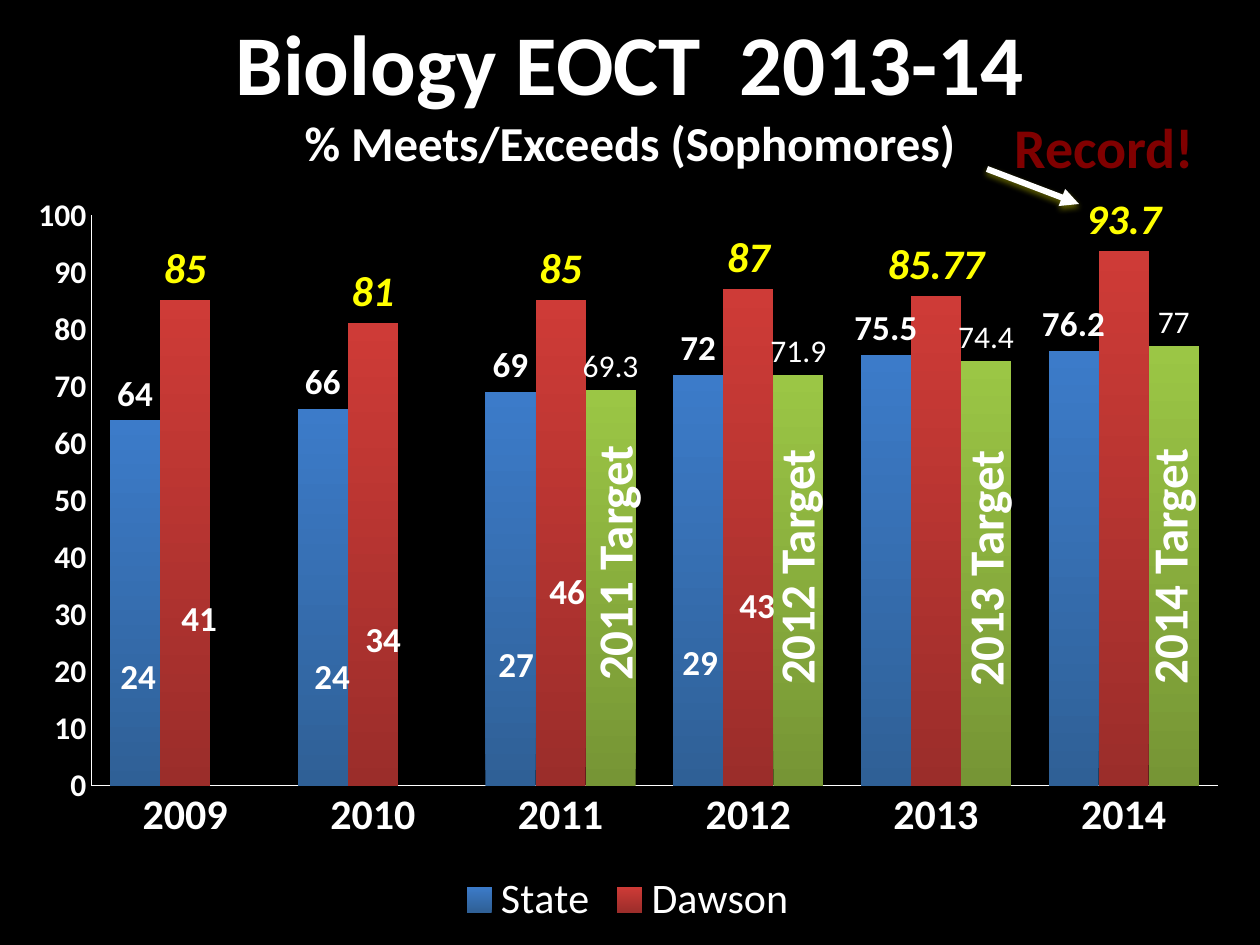
from lxml import etree
from pptx import Presentation
from pptx.chart.data import CategoryChartData
from pptx.dml.color import RGBColor
from pptx.enum.chart import XL_CHART_TYPE, XL_LABEL_POSITION, XL_LEGEND_POSITION, XL_TICK_MARK
from pptx.enum.shapes import MSO_CONNECTOR
from pptx.enum.text import MSO_ANCHOR, PP_ALIGN
from pptx.oxml import parse_xml
from pptx.oxml.ns import nsdecls, qn
from pptx.util import Pt

COLUMN = XL_CHART_TYPE.COLUMN_CLUSTERED
OUTSIDE_END = XL_LABEL_POSITION.OUTSIDE_END
LEGEND_BOTTOM = XL_LEGEND_POSITION.BOTTOM
NO_TICK = XL_TICK_MARK.NONE
STRAIGHT = MSO_CONNECTOR.STRAIGHT
TOP, MIDDLE = MSO_ANCHOR.TOP, MSO_ANCHOR.MIDDLE
LEFT, CENTER = PP_ALIGN.LEFT, PP_ALIGN.CENTER

EMU_PER_PX = 914400 / 126
FONT = "Calibri"
BLACK = RGBColor(0x00, 0x00, 0x00)
WHITE = RGBColor(0xFF, 0xFF, 0xFF)
YELLOW = RGBColor(0xFF, 0xFF, 0x00)
MAROON = RGBColor(0x80, 0x00, 0x00)
BLUE, DARK_BLUE = RGBColor(0x3C, 0x7B, 0xC9), RGBColor(0x2F, 0x60, 0x96)
RED, DARK_RED = RGBColor(0xCE, 0x3B, 0x37), RGBColor(0x9B, 0x2D, 0x2A)
GREEN, DARK_GREEN = RGBColor(0x9B, 0xC6, 0x45), RGBColor(0x76, 0x95, 0x35)

YEARS = ["2009", "2010", "2011", "2012", "2013", "2014"]
SERIES = [
    ("State", [64, 66, 69, 72, 75.5, 76.2], BLUE, DARK_BLUE, (20, WHITE, True, False)),
    ("Dawson", [85, 81, 85, 87, 85.77, 93.7], RED, DARK_RED, (24, YELLOW, True, True)),
    ("Series 3", [None, None, 69.3, 71.9, 74.4, 77], GREEN, DARK_GREEN, (18, WHITE, False, False)),
]
BAR_NOTES = [
    ("24", 108, 648), ("41", 169, 590), ("24", 302, 648), ("34", 353, 611),
    ("27", 486, 636), ("46", 537, 563), ("29", 670, 634), ("43", 727, 577),
]
TARGETS = [
    ("2011 Target", 571, 339, 448), ("2012 Target", 753, 343, 448),
    ("2013 Target", 942, 375, 387), ("2014 Target", 1126, 373, 387),
]


def px(value):
    return round(value * EMU_PER_PX)


def box_emu(box):
    return [px(length) for length in box]


def style_font(font, size, color=WHITE, bold=True, italic=False):
    font.name = FONT
    font.size = Pt(size)
    font.color.rgb = color
    font.bold = bold
    font.italic = italic


def add_text(slide, box, text, sizes, color=WHITE, align=LEFT, anchor=TOP, wrap=False):
    shape = slide.shapes.add_textbox(*box_emu(box))
    text_frame = shape.text_frame
    text_frame.word_wrap = wrap
    text_frame.vertical_anchor = anchor
    text_frame.text = text
    paragraph = text_frame.paragraphs[0]
    paragraph.alignment = align
    for run, size in zip(paragraph.runs, sizes):
        style_font(run.font, size, color)
    return shape


def add_title(slide, box):
    add_text(slide, box, "Biology EOCT  2013-14\v% Meets/Exceeds (Sophomores)",
             [48.6, 27.9], align=CENTER, anchor=MIDDLE, wrap=True)


def set_plot_layout(chart, x, y, width, height):
    plot_area = chart.element.chart.plotArea
    for layout in plot_area.findall(qn("c:layout")):
        plot_area.remove(layout)
    layout = etree.Element(qn("c:layout"))
    manual = etree.SubElement(layout, qn("c:manualLayout"))
    settings = [("layoutTarget", "inner"), ("xMode", "edge"), ("yMode", "edge"),
                ("x", x), ("y", y), ("w", width), ("h", height)]
    for tag, value in settings:
        etree.SubElement(manual, qn(f"c:{tag}")).set("val", str(value))
    plot_area.insert(0, layout)


def style_axis(axis, size):
    axis.major_tick_mark = NO_TICK
    axis.minor_tick_mark = NO_TICK
    axis.has_major_gridlines = False
    axis.format.line.color.rgb = WHITE
    axis.format.line.width = Pt(0.75)
    style_font(axis.tick_labels.font, size)


def style_series(series, light, dark, label_style):
    fill = series.format.fill
    fill.gradient()
    fill.gradient_angle = 90
    for stop, color in zip(fill.gradient_stops, (dark, light)):
        stop.color.rgb = color
    labels = series.data_labels
    labels.show_value = True
    labels.position = OUTSIDE_END
    style_font(labels.font, *label_style)


def add_legend(chart):
    chart.has_legend = True
    legend = chart.legend
    legend.position = LEGEND_BOTTOM
    legend.include_in_layout = False
    style_font(legend.font, 24, bold=False)
    legend_position = legend._element.find(qn("c:legendPos"))
    legend_position.addnext(parse_xml(
        f'<c:legendEntry {nsdecls("c")}><c:idx val="2"/><c:delete val="1"/></c:legendEntry>'))


def add_score_chart(slide, box):
    data = CategoryChartData()
    data.categories = YEARS
    for name, values, *_ in SERIES:
        data.add_series(name, values)
    chart = slide.shapes.add_chart(COLUMN, *box_emu(box), data).chart
    chart.has_title = False
    style_font(chart.font, 18, bold=False)
    plot = chart.plots[0]
    plot.gap_width = 75
    plot.overlap = 0
    plot.vary_by_categories = False
    for series, (_, _, light, dark, label_style) in zip(plot.series, SERIES):
        style_series(series, light, dark, label_style)
    style_axis(chart.category_axis, 24)
    style_axis(chart.value_axis, 18)
    chart.value_axis.minimum_scale = 0
    chart.value_axis.maximum_scale = 100
    chart.value_axis.major_unit = 10
    add_legend(chart)
    set_plot_layout(chart, 0.063, 0.045, 0.918, 0.758)


def add_bar_notes(slide):
    for text, left, top in BAR_NOTES:
        add_text(slide, (left, top, 62, 55), text, [20])


def add_targets(slide):
    for text, left, top, height in TARGETS:
        shape = add_text(slide, (left, top, 84, height), text, [28],
                         align=CENTER, anchor=MIDDLE, wrap=True)
        shape.element.txBody.find(qn("a:bodyPr")).set("vert", "vert270")


def add_record_callout(slide, box):
    left, top, _, _ = box
    add_text(slide, box, "Record!", [32], MAROON)
    arrow = slide.shapes.add_connector(
        STRAIGHT, px(left - 15), px(top + 63), px(left + 77), px(top + 98))
    arrow.line.color.rgb = WHITE
    arrow.line.width = Pt(3.5)
    etree.SubElement(arrow.line._get_or_add_ln(), qn("a:tailEnd")).set("type", "triangle")
    arrow.element.spPr.append(parse_xml(
        f'<a:effectLst {nsdecls("a")}>'
        f'<a:outerShdw blurRad="{Pt(3.6)}" dist="{Pt(1.6)}" dir="5400000" rotWithShape="0">'
        f'<a:srgbClr val="{YELLOW}"><a:alpha val="38000"/></a:srgbClr>'
        '</a:outerShdw></a:effectLst>'))


def main():
    presentation = Presentation()
    presentation.slide_width = px(1260)
    presentation.slide_height = px(945)
    slide = presentation.slides.add_slide(presentation.slide_layouts[6])
    slide.background.fill.solid()
    slide.background.fill.fore_color.rgb = BLACK
    add_title(slide, (63, 0, 1134, 181))
    add_score_chart(slide, (14, 181, 1227, 753))
    add_bar_notes(slide)
    add_targets(slide)
    add_record_callout(slide, (1002, 106, 209, 81))
    presentation.save("out.pptx")


if __name__ == "__main__":
    main()
